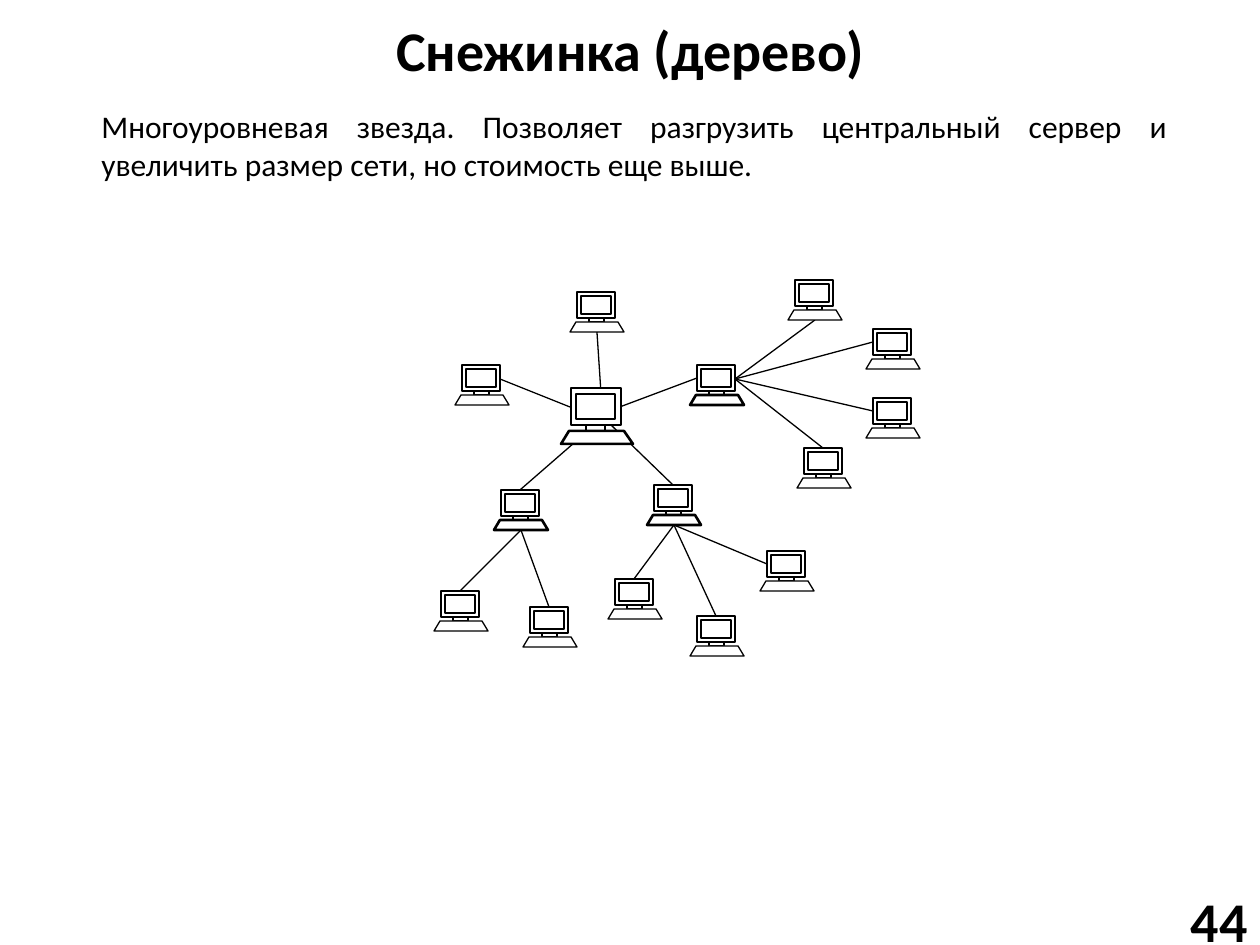
from pptx import Presentation
from pptx.dml.color import RGBColor
from pptx.enum.shapes import MSO_CONNECTOR, MSO_SHAPE
from pptx.enum.text import MSO_ANCHOR, PP_ALIGN
from pptx.oxml.ns import qn
from pptx.util import Emu, Pt
from lxml import etree

RECTANGLE = MSO_SHAPE.RECTANGLE
STRAIGHT = MSO_CONNECTOR.STRAIGHT
MIDDLE, TOP = MSO_ANCHOR.MIDDLE, MSO_ANCHOR.TOP
CENTER, RIGHT, JUSTIFY = PP_ALIGN.CENTER, PP_ALIGN.RIGHT, PP_ALIGN.JUSTIFY

# Content: text and its place as left, top, width, height
TITLE = ("Снежинка (дерево)", (35, 6, 1191, 87))
BODY = ("Многоуровневая звезда. Позволяет разгрузить центральный сервер и "
        "увеличить размер сети, но стоимость еще выше.", (89, 101, 1091, 89))
NUMBER = ("44", (1116, 895, 144, 50))

# Each computer: model and the corner of its monitor
COMPUTERS = {
    "west": ("leaf", 462, 365),
    "north": ("leaf", 577, 292),
    "east hub": ("hub", 697, 365),
    "south hub": ("hub", 654, 485),
    "west hub": ("hub", 501, 490),
    "center": ("server", 571, 388),
    "south 1": ("leaf", 615, 579),
    "south 2": ("leaf", 697, 616),
    "south 3": ("leaf", 767, 551),
    "east 1": ("leaf", 795, 280),
    "east 2": ("leaf", 873, 329),
    "east 3": ("leaf", 873, 398),
    "east 4": ("leaf", 804, 448),
    "west 1": ("leaf", 441, 591),
    "west 2": ("leaf", 530, 607),
}

# Each cable: computer and port at both ends
CABLES = [
    ("north", "bottom", "center", "inner top"),
    ("west", "right", "center", "inner left"),
    ("east hub", "left", "center", "inner right"),
    ("south hub", "top", "center", "inner lower right"),
    ("west hub", "top", "center", "inner lower left"),
    ("south 1", "top", "south hub", "bottom"),
    ("south 2", "top", "south hub", "bottom"),
    ("south 3", "left", "south hub", "bottom"),
    ("east 1", "bottom", "east hub", "right"),
    ("east 2", "left", "east hub", "right"),
    ("east 3", "left", "east hub", "right"),
    ("east 4", "top", "east hub", "right"),
    ("west 1", "top", "west hub", "bottom"),
    ("west 2", "top", "west hub", "bottom"),
]

# Offsets from the monitor corner
SMALL = {
    "monitor": (0, 0, 38, 26),
    "stand": (12, 26, 15, 4),
    "keyboard": [(-7, 40), (-1, 30), (41, 30), (47, 40)],
    "screen": (4, 4, 30, 18),
}
LARGE = {
    "monitor": (0, 0, 50, 37),
    "stand": (15, 37, 19, 6),
    "keyboard": [(-10, 56), (-2, 43), (53, 43), (62, 56)],
    "screen": (5, 6, 39, 25),
}
PORTS = {
    "top": (19, 0), "bottom": (20, 40), "left": (0, 13), "right": (38, 14),
    "inner top": (31, 20), "inner left": (24, 29), "inner right": (38, 23),
    "inner lower right": (38, 35), "inner lower left": (26, 35),
}

THEME = {
    "font": "Calibri", "ink": RGBColor(0, 0, 0), "paper": RGBColor(255, 255, 255),
    "title": 32, "body": 18, "thin": 0.75, "bold": 1.5,
}
MODELS = {"leaf": (SMALL, THEME["thin"]), "hub": (SMALL, THEME["bold"]),
          "server": (LARGE, THEME["bold"])}
EMU_PER_PX = 914400 / 126


def px(*values):
    return [Emu(round(value * EMU_PER_PX)) for value in values]


def write(box, content, size, bold, align, anchor):
    text, place = content
    box.left, box.top, box.width, box.height = px(*place)
    frame = box.text_frame
    frame.word_wrap = True
    frame.vertical_anchor = anchor
    frame.text = text
    para = frame.paragraphs[0]
    para.alignment = align
    font = para.runs[0].font
    font.name, font.size, font.bold = THEME["font"], Pt(size), bold
    font.color.rgb = THEME["ink"]


def paint(shape, weight):
    shape.shadow.inherit = False
    shape.fill.solid()
    shape.fill.fore_color.rgb = THEME["paper"]
    shape.line.color.rgb = THEME["ink"]
    shape.line.width = Pt(weight)


def draw_computer(shapes, name):
    model, x, y = COMPUTERS[name]
    parts, weight = MODELS[model]
    for part, outline in parts.items():
        if part == "keyboard":
            points = [px(x + dx, y + dy) for dx, dy in outline]
            builder = shapes.build_freeform(*points[0])
            builder.add_line_segments(points[1:], close=True)
            shape = builder.convert_to_shape()
        else:
            dx, dy, width, height = outline
            shape = shapes.add_shape(RECTANGLE, *px(x + dx, y + dy, width, height))
        paint(shape, weight)


def port_position(name, port):
    _, x, y = COMPUTERS[name]
    dx, dy = PORTS[port]
    return px(x + dx, y + dy)


def draw_cable(shapes, start, start_port, end, end_port):
    cable = shapes.add_connector(STRAIGHT, *port_position(start, start_port),
                                 *port_position(end, end_port))
    cable.line.color.rgb = THEME["ink"]
    cable.line.width = Pt(THEME["thin"])
    etree.SubElement(cable._element.spPr, qn("a:effectLst"))


def main():
    deck = Presentation()
    deck.slide_width, deck.slide_height = px(1260, 945)
    page = deck.slides.add_slide(deck.slide_layouts[5])
    write(page.shapes.title, TITLE, THEME["title"], True, CENTER, MIDDLE)

    # Network: cables lie behind the computers
    network = page.shapes.add_group_shape().shapes
    for cable in CABLES:
        draw_cable(network, *cable)
    for name in COMPUTERS:
        draw_computer(network, name)

    # Page number and description
    for content, size, bold, align, anchor in [
        (NUMBER, THEME["title"], True, RIGHT, MIDDLE),
        (BODY, THEME["body"], False, JUSTIFY, TOP),
    ]:
        box = page.shapes.add_textbox(*px(*content[1]))
        write(box, content, size, bold, align, anchor)

    deck.save("out.pptx")


if __name__ == "__main__":
    main()
